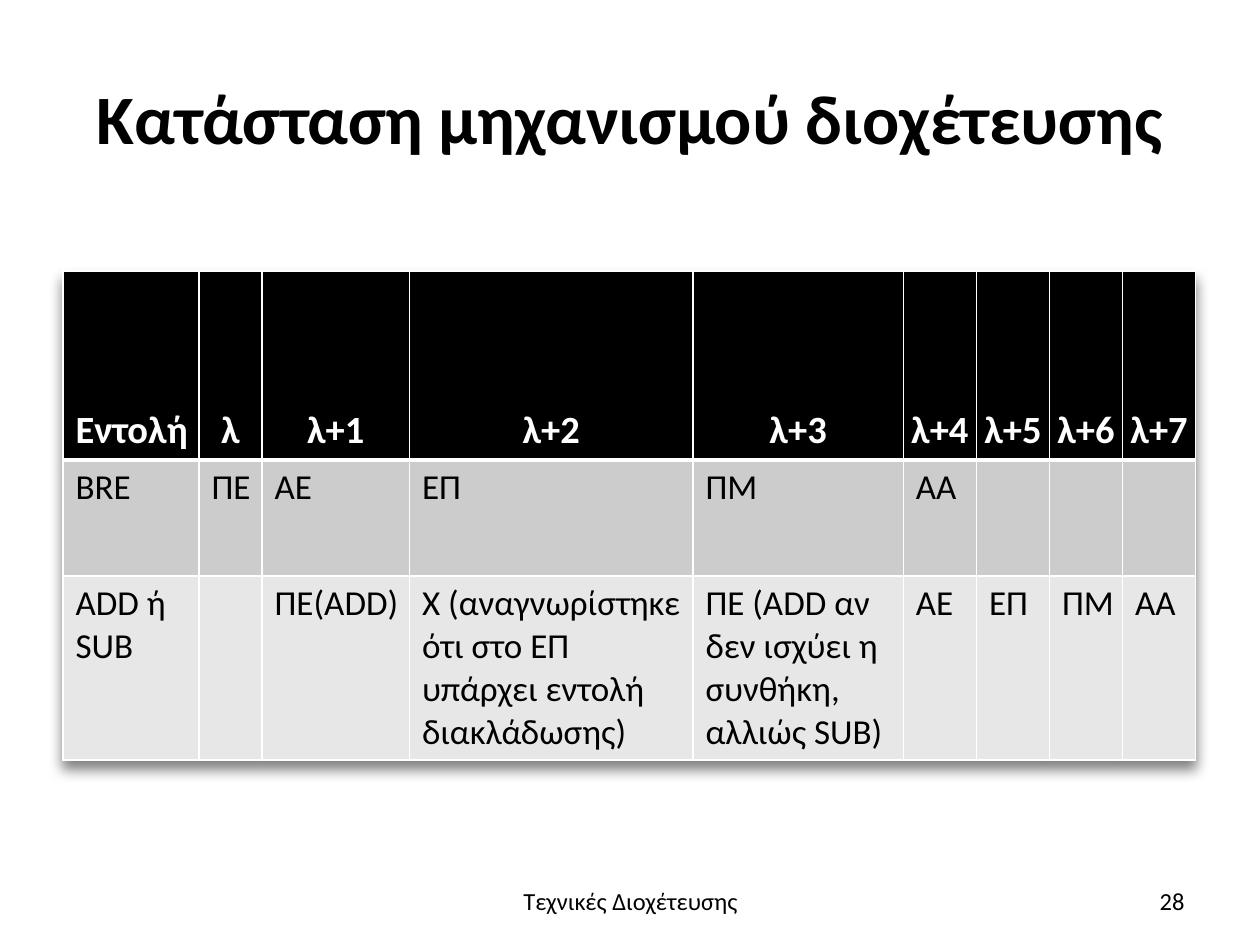
from dataclasses import dataclass

from lxml import etree
from pptx import Presentation
from pptx.dml.color import RGBColor
from pptx.enum.text import MSO_ANCHOR, PP_ALIGN
from pptx.oxml.ns import qn
from pptx.util import Pt

PX = 9144  # EMU; 100 px to the inch
LEFT, CENTER, RIGHT = PP_ALIGN.LEFT, PP_ALIGN.CENTER, PP_ALIGN.RIGHT
TOP, MIDDLE, BOTTOM = MSO_ANCHOR.TOP, MSO_ANCHOR.MIDDLE, MSO_ANCHOR.BOTTOM
TITLE_ONLY = 5


@dataclass(frozen=True)
class Theme:
    font: str = "Calibri"
    ink: str = "000000"
    paper: str = "FFFFFF"
    header_fill: str = "000000"
    row_fills: tuple = ("CCCCCC", "E7E7E7")
    title_size: float = 39.6
    header_size: int = 22
    cell_size: int = 20
    footer_size: int = 14
    rule: int = 1
    header_rule: int = 3


HEADINGS = ["Εντολή", "λ"] + [f"λ+{step}" for step in range(1, 8)]
INSTRUCTIONS = [
    ["BRE", "ΠΕ", "ΑΕ", "ΕΠ", "ΠΜ", "ΑΑ", "", "", ""],
    ["ADD ή SUB", "", "ΠΕ(ADD)",
     "X (αναγνωρίστηκε ότι στο ΕΠ υπάρχει εντολή διακλάδωσης)",
     "ΠΕ (ADD αν δεν ισχύει η συνθήκη, αλλιώς SUB)",
     "AE", "ΕΠ", "ΠΜ", "ΑΑ"],
]
COLUMN_WIDTHS = [108, 50, 117, 225, 167] + [58] * 4
ROW_HEIGHTS = [150, 92, 143]


def set_attributes(target, values):
    for name, value in values.items():
        setattr(target, name, value)


class SlideBuilder:
    """Holds the theme and the page being filled."""

    def __init__(self, page, theme):
        self.page = page
        self.theme = theme

    def add_text(self, frame, text, size, color, align=LEFT, bold=False):
        para = frame.paragraphs[0]
        para.alignment = align
        span = para.add_run()
        span.text = text
        set_attributes(span.font, {"name": self.theme.font, "size": Pt(size), "bold": bold})
        span.font.color.rgb = RGBColor.from_string(color)

    def place(self, box, left, top, width, height):
        set_attributes(box, {"left": left * PX, "top": top * PX,
                             "width": width * PX, "height": height * PX})
        set_attributes(box.text_frame, {"word_wrap": True, "vertical_anchor": MIDDLE})

    def title(self, text, *bounds):
        box = self.page.shapes.title
        self.place(box, *bounds)
        self.add_text(box.text_frame, text, self.theme.title_size, self.theme.ink, CENTER, True)

    def footer(self, text, align, *bounds):
        box = self.page.shapes.add_textbox(0, 0, 0, 0)
        self.place(box, *bounds)
        self.add_text(box.text_frame, text, self.theme.footer_size, self.theme.ink, align)

    def borders(self, cell, widths):
        """Draw the cell's sides; widths maps L, R, T and B to points."""
        properties = cell._tc.get_or_add_tcPr()
        for side, width in widths.items():
            line = etree.SubElement(properties, qn(f"a:ln{side}"), w=str(Pt(width)))
            fill = etree.SubElement(line, qn("a:solidFill"))
            etree.SubElement(fill, qn("a:srgbClr"), val=self.theme.paper)

    def table_shadow(self, table):
        effects = etree.Element(qn("a:effectLst"))
        shadow = etree.SubElement(effects, qn("a:outerShdw"), blurRad=str(Pt(8)),
                                  dist=str(Pt(5)), dir="5400000", rotWithShape="0")
        color = etree.SubElement(shadow, qn("a:srgbClr"), val=self.theme.ink)
        etree.SubElement(color, qn("a:alpha"), val="50000")
        table._tbl.tblPr.insert(0, effects)

    def cell(self, cell, text, row, column):
        theme = self.theme
        header = row == 0
        indented = not header or column == 0
        set_attributes(cell, {
            "margin_left": (10 if indented else 1) * PX, "margin_right": PX,
            "margin_top": 5 * PX, "margin_bottom": 5 * PX,
            "vertical_anchor": BOTTOM if header else TOP,
        })
        self.borders(cell, {
            "L": theme.rule, "R": theme.rule,
            "T": theme.header_rule if row == 1 else theme.rule,
            "B": theme.header_rule if header else theme.rule,
        })
        cell.fill.solid()
        fill = theme.header_fill if header else theme.row_fills[row - 1]
        cell.fill.fore_color.rgb = RGBColor.from_string(fill)
        if text:
            self.add_text(cell.text_frame, text,
                          theme.header_size if header else theme.cell_size,
                          theme.paper if header else theme.ink,
                          LEFT if indented else CENTER, header)

    def table(self, rows, widths, heights, left, top):
        table = self.page.shapes.add_table(
            len(rows), len(widths), left * PX, top * PX,
            sum(widths) * PX, sum(heights) * PX).table
        table.horz_banding = False
        self.table_shadow(table)
        for column, width in zip(table.columns, widths):
            column.width = width * PX
        for index, (texts, height) in enumerate(zip(rows, heights)):
            table.rows[index].height = height * PX
            for column, text in enumerate(texts):
                self.cell(table.cell(index, column), text, index, column)


def main():
    deck = Presentation()
    set_attributes(deck, {"slide_width": 1000 * PX, "slide_height": 750 * PX})
    page = deck.slides.add_slide(deck.slide_layouts[TITLE_ONLY])
    builder = SlideBuilder(page, Theme())
    builder.title("Κατάσταση μηχανισμού διοχέτευσης", 50, 30, 900, 125)
    builder.table([HEADINGS] + INSTRUCTIONS, COLUMN_WIDTHS, ROW_HEIGHTS, 50, 215)
    builder.footer("Τεχνικές Διοχέτευσης", CENTER, 342, 695, 317, 40)
    builder.footer("28", RIGHT, 717, 695, 233, 40)
    deck.save("out.pptx")


if __name__ == "__main__":
    main()
